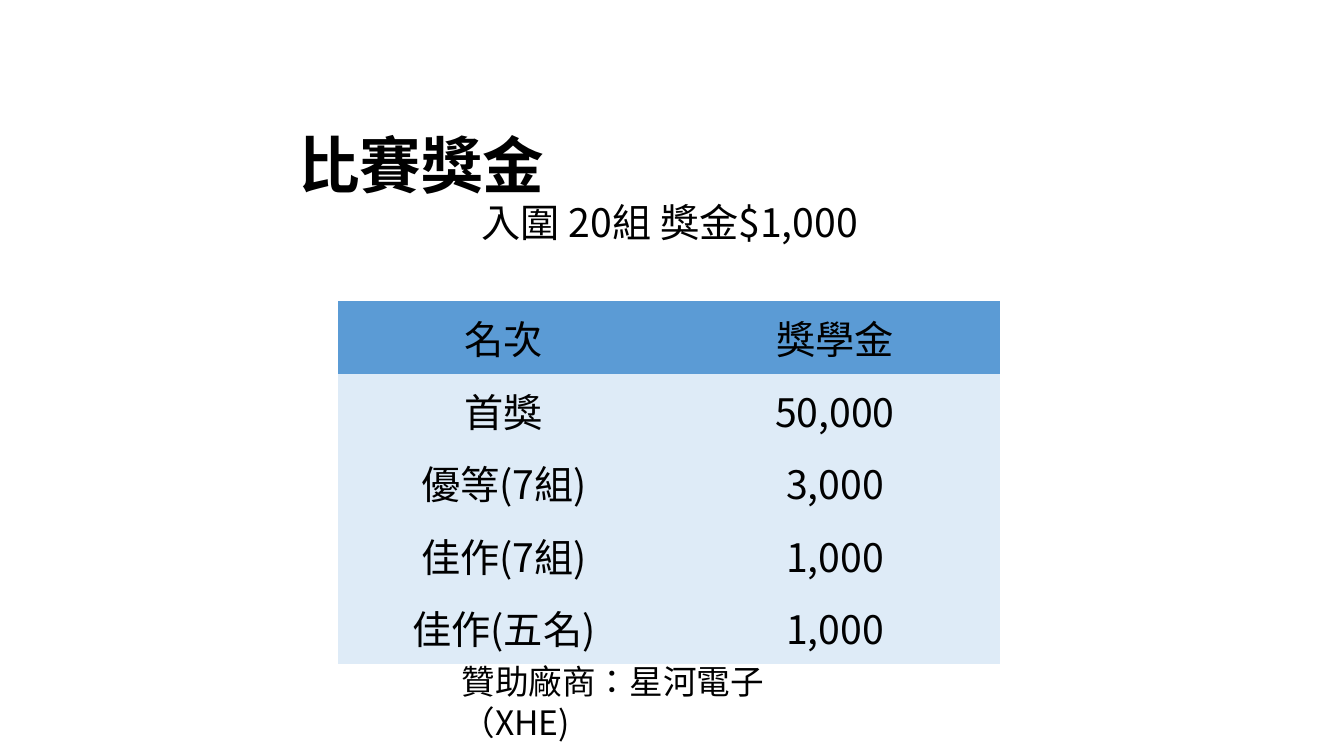
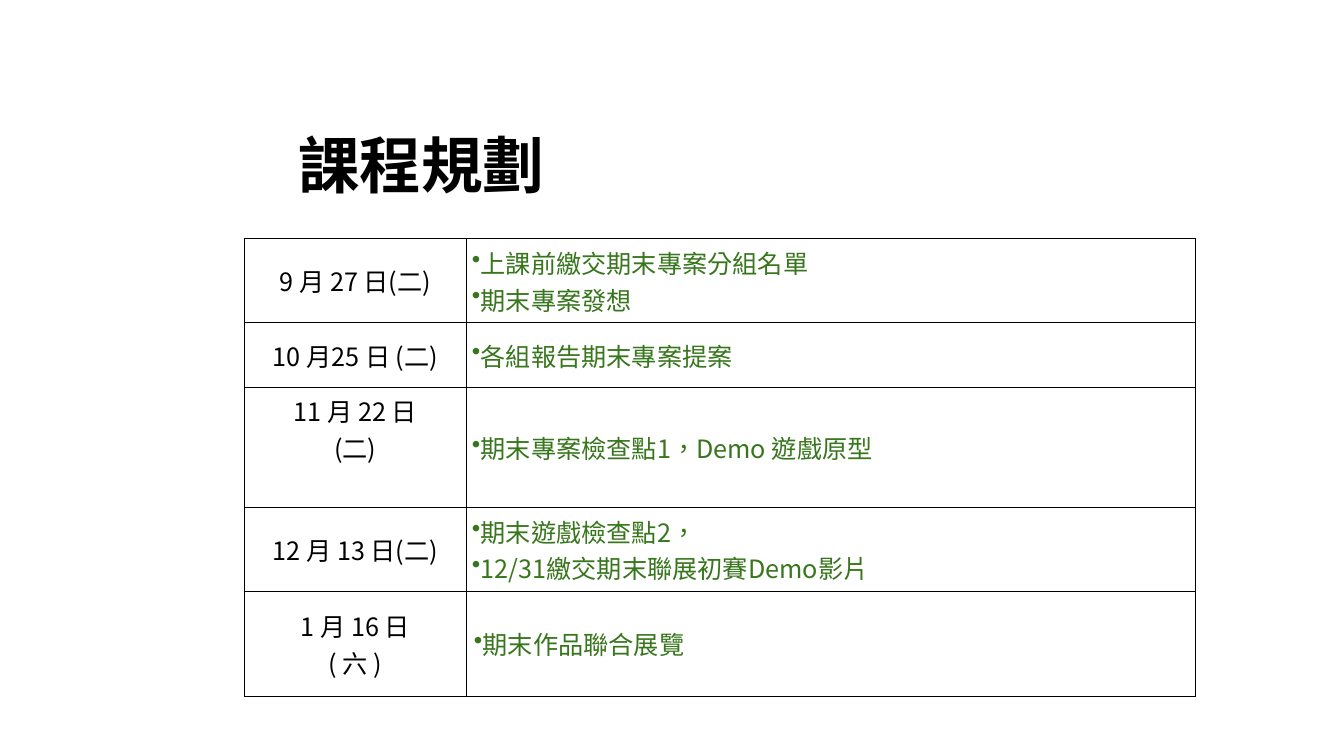
from pptx import Presentation
from pptx.dml.color import RGBColor
from pptx.enum.text import MSO_ANCHOR, MSO_AUTO_SIZE, PP_ALIGN
from pptx.oxml.ns import qn
from pptx.util import Cm, Pt
from lxml import etree

LEFT, CENTER = PP_ALIGN.LEFT, PP_ALIGN.CENTER
TOP, MIDDLE = MSO_ANCHOR.TOP, MSO_ANCHOR.MIDDLE
NO_FIT, GROW = MSO_AUTO_SIZE.NONE, MSO_AUTO_SIZE.SHAPE_TO_FIT_TEXT

BLACK = RGBColor(0x00, 0x00, 0x00)
GREEN = RGBColor(0x38, 0x76, 0x1D)
BLUE = RGBColor(0x5B, 0x9B, 0xD5)
PALE_BLUE = RGBColor(0xDE, 0xEB, 0xF7)
FONT = "Noto Sans CJK SC"
PLAIN_TABLE = "{2D5ABB26-0587-4C30-8999-92F81FD0307C}"
MARGINS = ("margin_left", "margin_top", "margin_right", "margin_bottom")


def write(frame, lines, size, color=BLACK, align=LEFT, bold=False, bullet=False):
    """Fill a text frame with one formatted paragraph per line."""
    frame.text = "\n".join(lines)
    for para in frame.paragraphs:
        para.alignment = align
        if bullet:
            properties = para._p.get_or_add_pPr()
            properties.set("marL", "0")
            properties.set("indent", "0")
            etree.SubElement(properties, qn("a:buChar")).set("char", "•")
        for span in para.runs:
            span.font.color.rgb = color
            for name, value in {"name": FONT, "size": Pt(size), "bold": bold}.items():
                setattr(span.font, name, value)
            span_properties = span._r.get_or_add_rPr()
            span_properties.set("lang", "zh-TW")
            etree.SubElement(span_properties, qn("a:ea")).set("typeface", FONT)


def add_plain_table(page, left, top, widths, heights):
    """Add a table without banding, borders or fills."""
    frame = page.shapes.add_table(len(heights), len(widths), Cm(left), Cm(top),
                                  Cm(sum(widths)), Cm(sum(heights)))
    table = frame.table
    table.first_row = table.horz_banding = False
    table._tbl.tblPr.find(qn("a:tableStyleId")).text = PLAIN_TABLE
    for column, width in zip(table.columns, widths):
        column.width = Cm(width)
    for row, height in zip(table.rows, heights):
        row.height = Cm(height)
    return table


deck = Presentation()
deck.slide_width, deck.slide_height = Cm(33.87), Cm(19.05)

# Pages with their shared title style
pages = []
for heading in ("比賽獎金", "課程規劃"):
    page = deck.slides.add_slide(deck.slide_layouts[5])
    title = page.shapes.title
    title.left, title.top, title.width, title.height = Cm(7.26), Cm(3.43), Cm(12.22), Cm(1.63)
    frame = title.text_frame
    write(frame, [heading], 44, bold=True)
    frame.paragraphs[0].line_spacing = 0.9
    settings = dict.fromkeys(MARGINS, Cm(0.25))
    settings.update(vertical_anchor=MIDDLE, auto_size=NO_FIT, word_wrap=True)
    for name, value in settings.items():
        setattr(frame, name, value)
    pages.append(page)
prize_page, schedule_page = pages

# Prize table
prizes = [
    ("名次", "獎學金"),
    ("首獎", "50,000"),
    ("優等(7組)", "3,000"),
    ("佳作(7組)", "1,000"),
    ("佳作(五名)", "1,000"),
]
prize_table = add_plain_table(prize_page, 8.53, 7.59, [8.34] * 2, [1.79] * len(prizes))
for row_index, prize in enumerate(prizes):
    for cell, text in zip(prize_table.rows[row_index].cells, prize):
        cell.fill.solid()
        cell.fill.fore_color.rgb = PALE_BLUE if row_index else BLUE
        for name, margin in zip(MARGINS, (0.36, 0.2, 0.36, 0.2)):
            setattr(cell, name, Cm(margin))
        write(cell.text_frame, [text], 28, align=CENTER)

# Sponsor and finalist lines
for text, size, align, place in (
    ("贊助廠商：星河電子（XHE)", 24, LEFT, (11.38, 16.54, 10.62, 1.28)),
    ("入圍 20組 獎金$1,000", 28, CENTER, (8.41, 4.88, 16.94, 1.45)),
):
    box = prize_page.shapes.add_textbox(*map(Cm, place))
    box.text_frame.word_wrap = True
    box.text_frame.auto_size = GROW
    write(box.text_frame, [text], size, align=align)

# Schedule table: height, date, anchor of the date, margin, tasks
schedule = [
    (2.11, "9 月 27 日(二)", MIDDLE, 0.13, ["上課前繳交期末專案分組名單", "期末專案發想"]),
    (1.63, "10 月25 日 (二)", MIDDLE, 0.13, ["各組報告期末專案提案"]),
    (3.03, "11 月 22 日\v(二)", TOP, 0.13, ["期末專案檢查點1，Demo 遊戲原型"]),
    (2.11, "12 月 13 日(二)", MIDDLE, 0.13,
     ["期末遊戲檢查點2，", "12/31繳交期末聯展初賽Demo影片"]),
    (2.65, "1 月 16 日\v( 六 )", MIDDLE, 0.18, ["期末作品聯合展覽"]),
]
schedule_table = add_plain_table(schedule_page, 6.15, 6.02, [5.61, 18.36],
                                 [entry[0] for entry in schedule])
for row, (height, date, anchor, margin, tasks) in zip(schedule_table.rows, schedule):
    date_cell, task_cell = row.cells
    write(date_cell.text_frame, [date], 18, align=CENTER)
    write(task_cell.text_frame, tasks, 18, GREEN, bullet=True)
    for cell, cell_anchor in ((date_cell, anchor), (task_cell, MIDDLE)):
        cell.vertical_anchor = cell_anchor
        for name in MARGINS:
            setattr(cell, name, Cm(margin))
        cell.fill.background()
        cell_properties = cell._tc.get_or_add_tcPr()
        for position, side in enumerate(("a:lnL", "a:lnR", "a:lnT", "a:lnB")):
            border = etree.Element(qn(side), w=str(Pt(0.75)))
            fill = etree.SubElement(border, qn("a:solidFill"))
            etree.SubElement(fill, qn("a:srgbClr")).set("val", str(BLACK))
            cell_properties.insert(position, border)

deck.save("out.pptx")
